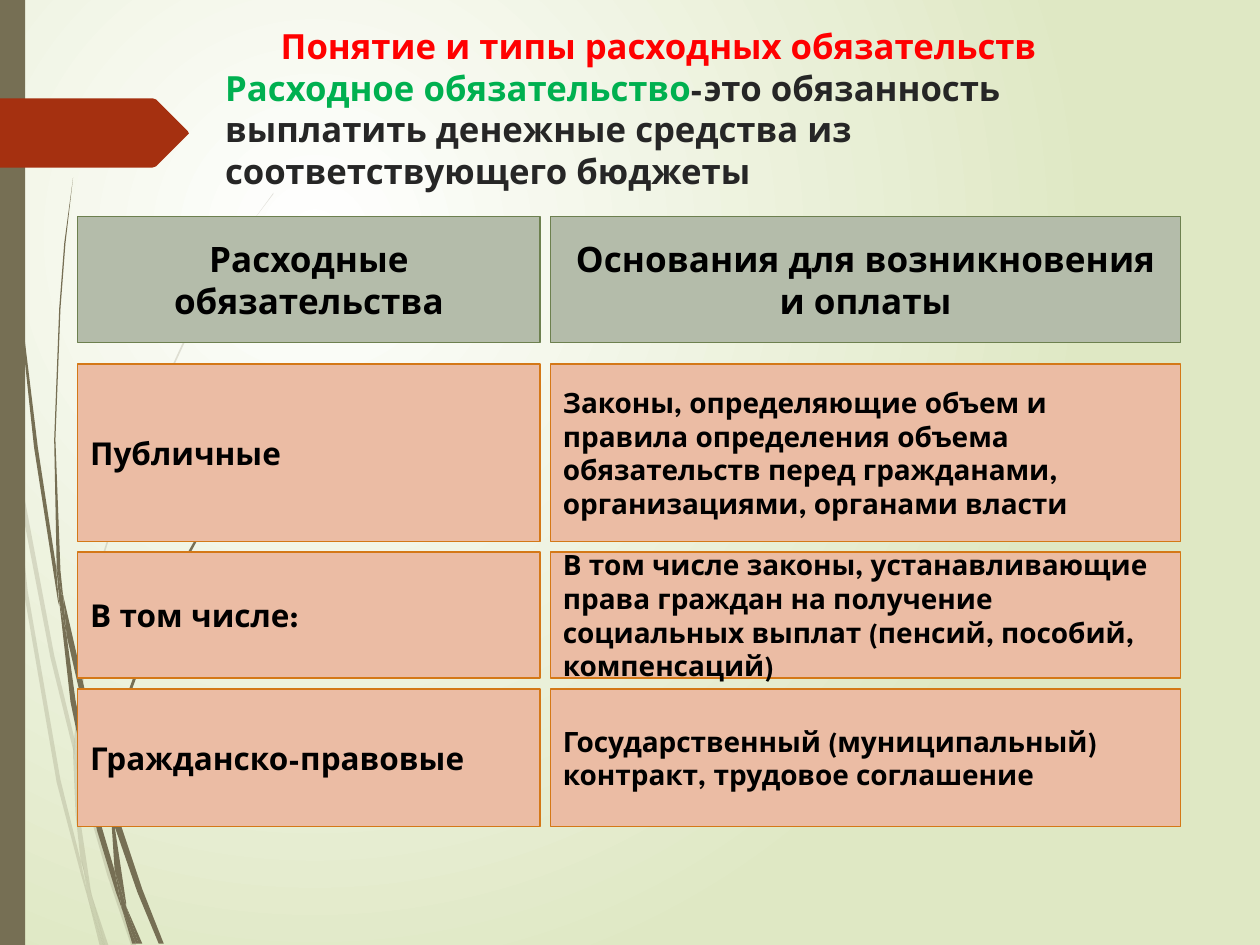
from lxml import etree
from pptx import Presentation
from pptx.dml.color import RGBColor
from pptx.enum.shapes import MSO_SHAPE
from pptx.enum.text import MSO_ANCHOR, PP_ALIGN
from pptx.oxml.ns import qn
from pptx.util import Cm, Pt

RECTANGLE = MSO_SHAPE.RECTANGLE
TOP, MIDDLE = MSO_ANCHOR.TOP, MSO_ANCHOR.MIDDLE
LEFT, CENTER = PP_ALIGN.LEFT, PP_ALIGN.CENTER

WHITE = RGBColor(0xFF, 0xFF, 0xFF)
PALE_GREEN = RGBColor(0xDF, 0xE8, 0xC4)
OLIVE = RGBColor(0x76, 0x6F, 0x54)
RUST = RGBColor(0xA5, 0x30, 0x10)
RED = RGBColor(0xFF, 0x00, 0x00)
GREEN = RGBColor(0x00, 0xB0, 0x50)
CHARCOAL = RGBColor(0x26, 0x26, 0x26)
BLACK = RGBColor(0x00, 0x00, 0x00)
SAGE = RGBColor(0xB4, 0xBC, 0xAA)
SAGE_EDGE = RGBColor(0x6D, 0x80, 0x4F)
PEACH = RGBColor(0xEB, 0xBC, 0xA4)
ORANGE_EDGE = RGBColor(0xD4, 0x78, 0x17)

HUNDREDTH_INCH = Cm(2.54) / 100

PALE_WISPS = [
    [(8, 350), (6, 322), (0, 282), (0, 299), (7, 344)],
    [(40, 522), (59, 599), (59, 586), (43, 520), (10, 345), (12, 376)],
    [(64, 607), (61, 596), (61, 610), (85, 694), (104, 750), (108, 750), (88, 692)],
    [(83, 750), (86, 750), (73, 711)],
    [(64, 683), (48, 619), (22, 469), (12, 376), (8, 350), (19, 470), (45, 621),
     (64, 693), (70, 714), (69, 707)],
    [(58, 599), (60, 646), (64, 683), (67, 692), (73, 711), (72, 706), (63, 646),
     (61, 610), (61, 608)],
    [(61, 584), (76, 462), (111, 349), (159, 245), (187, 198), (201, 175), (217, 154),
     (217, 153), (201, 175), (186, 197), (158, 244), (110, 348), (75, 461), (59, 584),
     (59, 586), (61, 596)],
    [(70, 714), (79, 750), (82, 750)],
    [(61, 608), (61, 610), (61, 596), (59, 586), (58, 599)],
    [(67, 692), (65, 683), (69, 707), (70, 714), (82, 750), (83, 750), (73, 711)],
]

DARK_WISPS = [
    [(5, 110), (14, 233), (27, 355), (46, 477), (47, 481), (45, 457), (45, 453),
     (30, 355), (15, 232), (6, 109), (4, 48), (3, 0), (2, 0), (3, 48)],
    [(73, 592), (88, 645), (88, 633), (88, 631), (77, 590), (50, 472), (53, 505)],
    [(94, 649), (91, 641), (91, 656), (109, 708), (126, 749), (130, 749), (113, 706)],
    [(91, 691), (81, 657), (60, 556), (53, 505), (47, 477), (56, 557), (77, 659),
     (92, 708), (97, 722), (96, 717)],
    [(50, 472), (48, 453), (44, 349), (48, 245), (52, 193), (58, 141), (51, 193),
     (47, 245), (43, 349), (45, 449), (49, 472)],
    [(110, 749), (113, 749), (100, 719)],
    [(47, 477), (53, 505), (50, 472), (49, 472), (45, 449), (45, 453)],
    [(91, 633), (103, 552), (131, 476), (169, 406), (191, 374), (203, 359), (216, 344),
     (215, 344), (203, 358), (191, 373), (168, 405), (129, 474), (101, 551), (88, 631),
     (91, 641)],
    [(97, 722), (105, 749), (108, 749)],
    [(88, 645), (91, 691), (96, 706), (100, 719), (100, 716), (91, 656), (90, 651)],
    [(88, 645), (90, 651), (91, 656), (91, 641), (88, 631), (88, 633)],
    [(96, 706), (91, 691), (96, 717), (97, 722), (108, 749), (110, 749), (100, 719)],
]

ARROW_TAG = [(0, 78), (121, 78), (124, 79), (149, 104), (150, 105.5), (149, 107),
             (124, 132), (121, 133), (0, 133)]


class ObligationsSlide:
    typeface = {"name": "League Spartan", "bold": True}

    def __init__(self, deck):
        self.slide = deck.slides.add_slide(deck.slide_layouts[6])
        self.shapes = self.slide.shapes

    def background(self, center, edge):
        fill = self.slide.background.fill
        fill.gradient()
        for stop, color in zip(fill.gradient_stops, (center, edge)):
            stop.color.rgb = color
        gradient = self.slide.element.find(".//" + qn("a:gradFill"))
        gradient.remove(gradient.find(qn("a:lin")))
        radial = etree.SubElement(gradient, qn("a:path"), {"path": "circle"})
        focus = {"l": "50000", "t": "50000", "r": "100000", "b": "100000"}
        etree.SubElement(radial, qn("a:fillToRect"), focus)

    def paint(self, shape, color, edge=None):
        shape.shadow.inherit = False
        shape.fill.solid()
        shape.fill.fore_color.rgb = color
        if edge is None:
            shape.line.fill.background()
        else:
            shape.line.color.rgb = edge
            shape.line.width = Pt(0.75)

    def outline(self, shapes, points, color, opacity=100):
        builder = shapes.build_freeform(*points[0], scale=HUNDREDTH_INCH)
        builder.add_line_segments(points[1:], close=True)
        outline = builder.convert_to_shape()
        self.paint(outline, color)
        if opacity < 100:
            tint = outline.element.spPr.find(".//" + qn("a:srgbClr"))
            etree.SubElement(tint, qn("a:alpha"), {"val": str(opacity * 1000)})

    def wisps(self, strands, color, opacity=100):
        group = self.shapes.add_group_shape()
        for points in strands:
            self.outline(group.shapes, points, color, opacity)

    def frame(self, shape, anchor):
        frame = shape.text_frame
        for attribute, value in {"word_wrap": True, "vertical_anchor": anchor}.items():
            setattr(frame, attribute, value)
        return frame

    def add_text(self, paragraph, text, size, color, align=LEFT):
        paragraph.alignment = align
        run = paragraph.add_run()
        run.text = text
        for attribute, value in {**self.typeface, "size": Pt(size)}.items():
            setattr(run.font, attribute, value)
        run.font.color.rgb = color

    def title(self, box, heading, definition, size, indent):
        frame = self.frame(self.shapes.add_textbox(*map(Cm, box)), TOP)
        first = frame.paragraphs[0]
        self.add_text(first, heading, size, RED)
        first._p.get_or_add_pPr().set("marL", str(Cm(indent)))
        second = frame.add_paragraph()
        for text, color in definition:
            self.add_text(second, text, size, color)

    def block(self, box, color, edge=None, text="", size=18, align=LEFT):
        block = self.shapes.add_shape(RECTANGLE, *map(Cm, box))
        self.paint(block, color, edge)
        if text:
            paragraph = self.frame(block, MIDDLE).paragraphs[0]
            self.add_text(paragraph, text, size, BLACK, align)


def main():
    deck = Presentation()
    deck.slide_width, deck.slide_height = Cm(25.4), Cm(19.05)
    page = ObligationsSlide(deck)
    page.background(WHITE, PALE_GREEN)
    page.wisps(PALE_WISPS, OLIVE, opacity=20)
    page.wisps(DARK_WISPS, OLIVE)
    page.block((0, 0, 0.51, 19.05), OLIVE)
    page.outline(page.shapes, ARROW_TAG, RUST)

    page.title(
        (4.29, 0.38, 18.31, 3.56),
        "Понятие и типы расходных обязательств",
        [("Расходное обязательство", GREEN),
         ("-это обязанность выплатить денежные средства из соответствующего бюджеты", CHARCOAL)],
        size=19.8, indent=1.12)

    header = (SAGE, SAGE_EDGE, (20, 20), CENTER)
    body = (PEACH, ORANGE_EDGE, (18, 16), LEFT)
    columns = [(1.57, 9.32), (11.1, 12.7)]
    rows = [
        (4.37, 2.54, header, "Расходные обязательства",
         "Основания для возникновения и оплаты"),
        (7.34, 3.58, body, "Публичные",
         "Законы, определяющие объем и правила определения объема обязательств "
         "перед гражданами, организациями, органами власти"),
        (11.13, 2.54, body, "В том числе:",
         "В том числе законы, устанавливающие права граждан на получение "
         "социальных выплат (пенсий, пособий, компенсаций)"),
        (13.89, 2.77, body, "Гражданско-правовые",
         "Государственный (муниципальный) контракт, трудовое соглашение"),
    ]
    for top, height, (color, edge, sizes, align), *texts in rows:
        for (left, width), size, text in zip(columns, sizes, texts):
            page.block((left, top, width, height), color, edge, text, size, align)

    deck.save("out.pptx")


if __name__ == "__main__":
    main()
